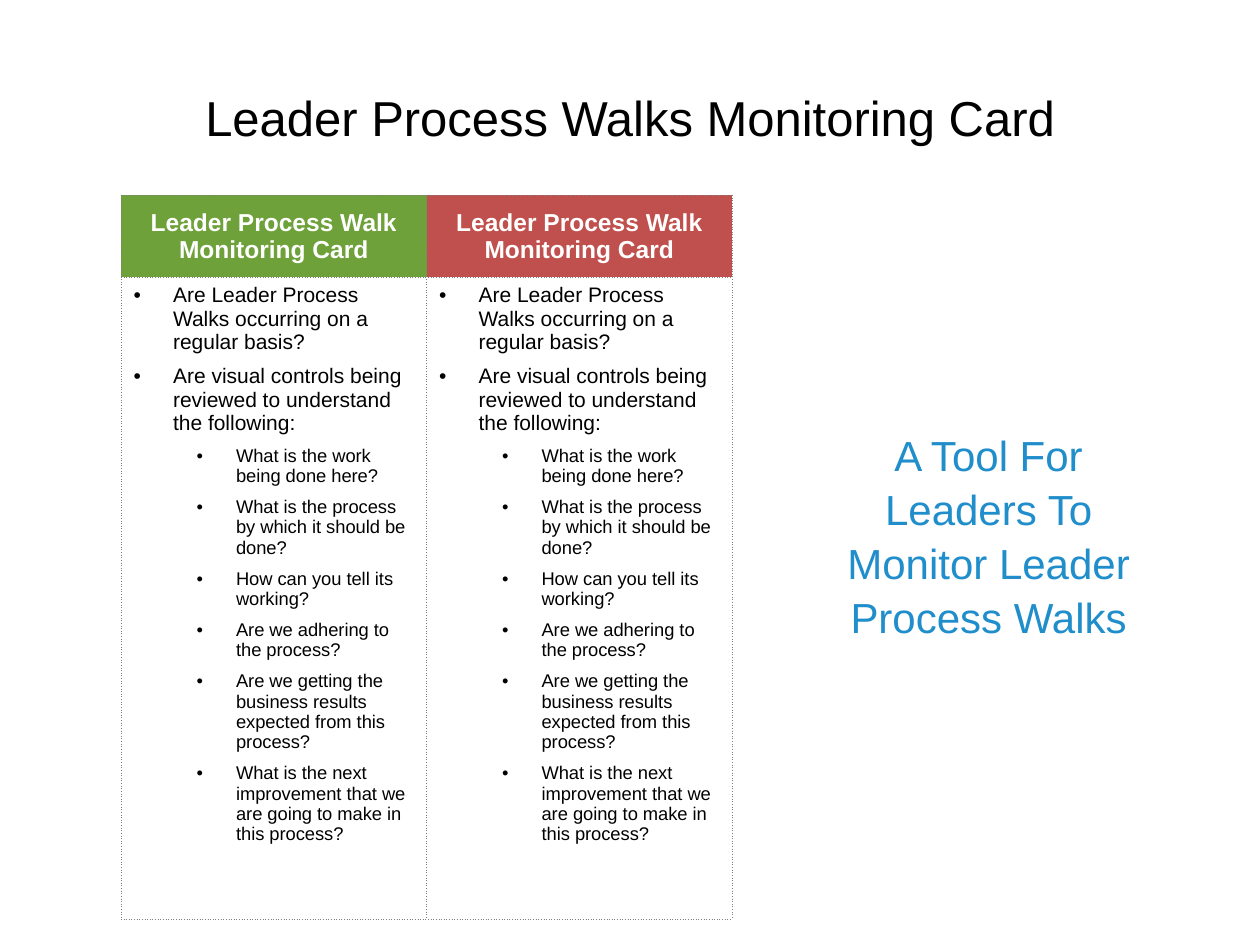
from dataclasses import dataclass

from lxml.etree import SubElement
from pptx import Presentation
from pptx.dml.color import RGBColor
from pptx.enum.text import MSO_ANCHOR, PP_ALIGN
from pptx.oxml.ns import qn
from pptx.util import Pt


@dataclass(frozen=True)
class Theme:
    font: str = "Arial"
    black: str = "000000"
    white: str = "FFFFFF"
    green: str = "6EA139"
    red: str = "C0504D"
    blue: str = "208ECB"
    border: str = "7F7F7F"
    title: float = 28
    callout: float = 24
    header: float = 14
    question: float = 12
    subquestion: float = 10.5


theme = Theme()


def write(p, text, size, color, bold=False, align=PP_ALIGN.LEFT, bullet_indent=None):
    p.text = text
    p.alignment = align
    if bullet_indent is not None:
        p.space_after = Pt(6)
        pPr = p._p.get_or_add_pPr()
        pPr.set("marL", str(Pt(bullet_indent)))
        pPr.set("indent", str(-Pt(22.5)))
        SubElement(pPr, qn("a:buFont"), typeface=theme.font)
        SubElement(pPr, qn("a:buChar"), char="•")
    for r in p.runs:
        r.font.name = theme.font
        r.font.size = Pt(size)
        r.font.bold = bold
        r.font.color.rgb = RGBColor.from_string(color)


prs = Presentation()
prs.slide_width, prs.slide_height = Pt(720), Pt(540)
s = prs.slides.add_slide(prs.slide_layouts[6])

tf = s.shapes.add_textbox(Pt(36), Pt(21.6), Pt(648), Pt(90)).text_frame
tf.word_wrap = True
tf.vertical_anchor = MSO_ANCHOR.MIDDLE
write(tf.paragraphs[0], "Leader Process Walks Monitoring Card",
      theme.title, theme.black, align=PP_ALIGN.CENTER)

questions = [
    (0, "Are Leader Process Walks occurring on a regular basis?"),
    (0, "Are visual controls being reviewed to understand the following:"),
    (1, "What is the work being done here?"),
    (1, "What is the process by which it should be done?"),
    (1, "How can you tell its working?"),
    (1, "Are we adhering to the process?"),
    (1, "Are we getting the business results expected from this process?"),
    (1, "What is the next improvement that we are going to make in this process?"),
]
level_formats = [(theme.question, 22.5), (theme.subquestion, 58.5)]

header_height, body_height, card_width = 46.8, 366.8, 174.6
table = s.shapes.add_table(2, 2, Pt(69.2), Pt(111.6), Pt(2 * card_width),
                           Pt(header_height + body_height)).table
table.rows[0].height = Pt(header_height)
table.rows[1].height = Pt(body_height)

for col, header_color in enumerate([theme.green, theme.red]):
    table.columns[col].width = Pt(card_width)
    header, body = table.cell(0, col), table.cell(1, col)

    for cell in (header, body):
        tcPr = cell._tc.get_or_add_tcPr()
        for side in ("lnL", "lnR", "lnT", "lnB"):
            ln = SubElement(tcPr, qn(f"a:{side}"), w=str(Pt(0.25)))
            fill = SubElement(ln, qn("a:solidFill"))
            SubElement(fill, qn("a:srgbClr"), val=theme.border)
            SubElement(ln, qn("a:prstDash"), val="sysDot")

    header.fill.solid()
    header.fill.fore_color.rgb = RGBColor.from_string(header_color)
    header.vertical_anchor = MSO_ANCHOR.MIDDLE
    write(header.text_frame.paragraphs[0], "Leader Process Walk\vMonitoring Card",
          theme.header, theme.white, bold=True, align=PP_ALIGN.CENTER)

    body.fill.background()
    tf = body.text_frame
    for i, (level, question) in enumerate(questions):
        p = tf.add_paragraph() if i else tf.paragraphs[0]
        p.level = level
        size, indent = level_formats[level]
        write(p, question, size, theme.black, bullet_indent=indent)

tf = s.shapes.add_textbox(Pt(466.6), Pt(239.8), Pt(196.6), Pt(123.8)).text_frame
tf.word_wrap = True
p = tf.paragraphs[0]
write(p, "A Tool For Leaders To Monitor Leader Process Walks",
      theme.callout, theme.blue, align=PP_ALIGN.CENTER)
p.line_spacing = 1.07

prs.save("out.pptx")
